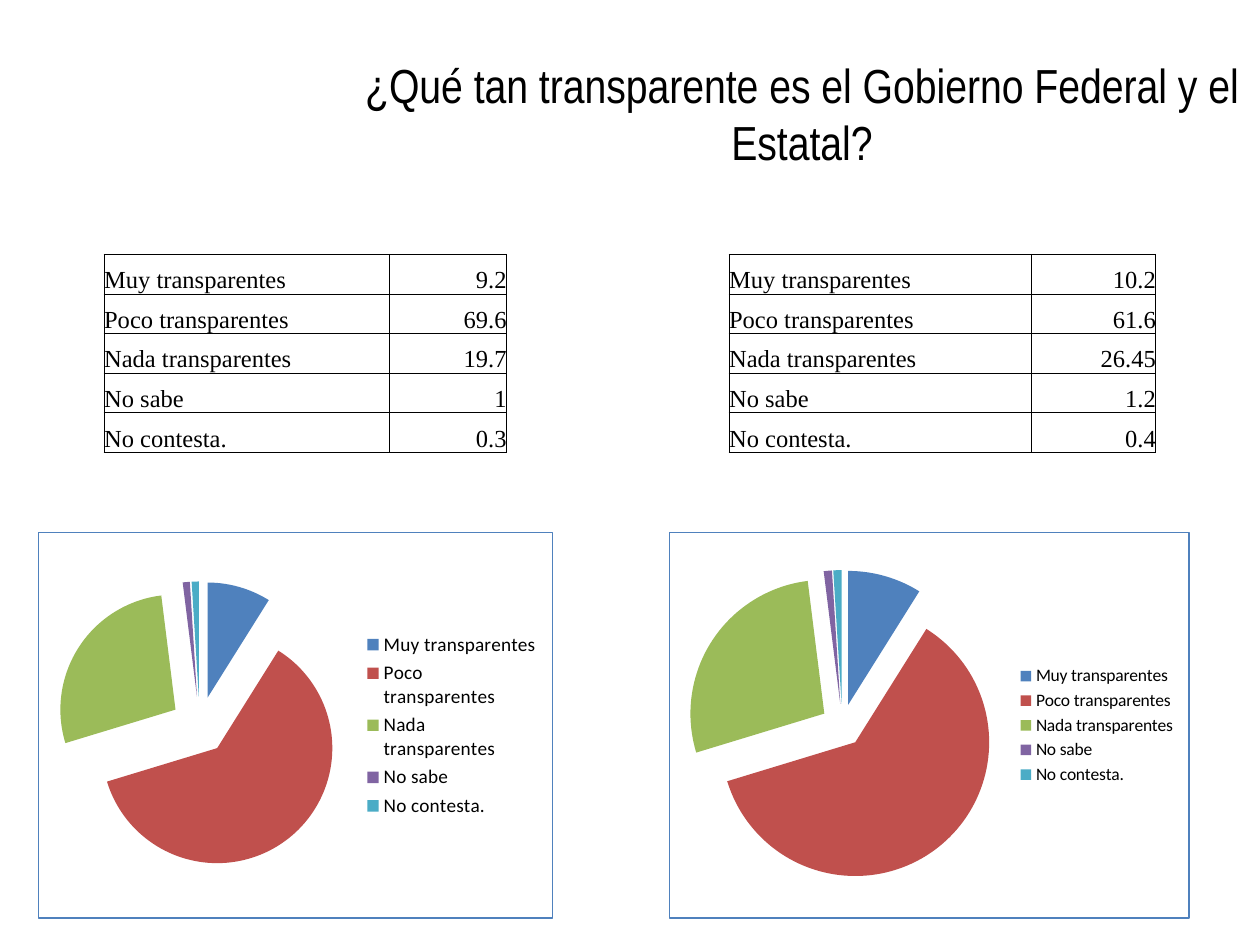
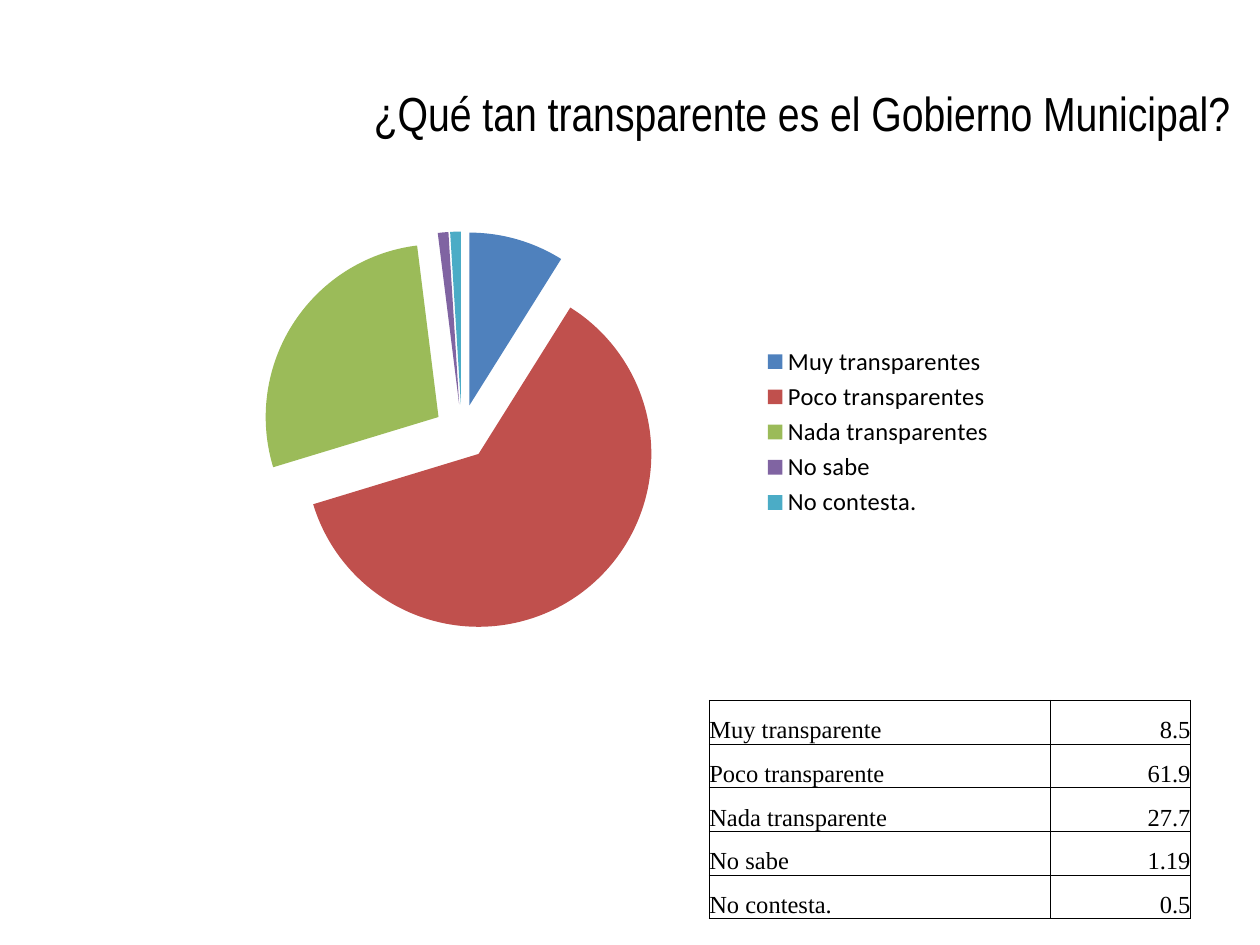
"""Build two slides on perceived government transparency with tables and pie charts."""
from lxml import etree
from pptx import Presentation
from pptx.chart.data import CategoryChartData
from pptx.dml.color import RGBColor
from pptx.enum.chart import XL_CHART_TYPE, XL_LEGEND_POSITION
from pptx.enum.text import MSO_ANCHOR, PP_ALIGN
from pptx.oxml import parse_xml
from pptx.oxml.ns import nsdecls, qn
from pptx.util import Pt

PIE = XL_CHART_TYPE.PIE
RIGHT_LEGEND = XL_LEGEND_POSITION.RIGHT
MIDDLE, BOTTOM = MSO_ANCHOR.MIDDLE, MSO_ANCHOR.BOTTOM
LEFT, CENTER, RIGHT = PP_ALIGN.LEFT, PP_ALIGN.CENTER, PP_ALIGN.RIGHT

BLACK = "000000"
BORDER = "4F81BD"
SLICES = ["4F81BD", "C0504D", "9BBB59", "8064A2", "4BACC6"]
CATEGORIES = ["Muy transparentes", "Poco transparentes", "Nada transparentes",
              "No sabe", "No contesta."]
SINGULAR = ["Muy transparente", "Poco transparente", "Nada transparente",
            "No sabe", "No contesta."]
SHARES = [9, 62, 28, 1, 1]

SLIDES = [
    {
        "title": "¿Qué tan transparente es el Gobierno Federal y el Estatal?",
        "panels": [
            {"labels": CATEGORIES, "values": ["9.2", "69.6", "19.7", "1", "0.3"],
             "table": (59.5, 145.3), "cols": (163, 67), "row": 22.65,
             "chart": (21.6, 304, 294.5, 221), "legend": 11, "explode": 25, "border": True},
            {"labels": CATEGORIES, "values": ["10.2", "61.6", "26.45", "1.2", "0.4"],
             "table": (416.6, 145.3), "cols": (172.7, 71.2), "row": 22.65,
             "chart": (382.3, 304, 297.5, 221), "legend": 10, "explode": 16, "border": True},
        ],
    },
    {
        "title": "¿Qué tan transparente es el Gobierno Municipal?",
        "panels": [
            {"labels": SINGULAR, "values": ["8.5", "61.9", "27.7", "1.19", "0.5"],
             "table": (405.3, 400.2), "cols": (195, 80), "row": 25,
             "chart": (93.6, 122.4, 481.7, 249), "legend": 14, "explode": 16, "border": False},
        ],
    },
]


def rgb(color):
    return RGBColor.from_string(color)


def set_font(font, name, size):
    font.name = name
    font.size = Pt(size)
    font.color.rgb = rgb(BLACK)


prs = Presentation()
prs.slide_width, prs.slide_height = Pt(720), Pt(540)

for content in SLIDES:
    s = prs.slides.add_slide(prs.slide_layouts[6])
    tf = s.shapes.add_textbox(Pt(201.6), Pt(6.5), Pt(513.4), Pt(116)).text_frame
    tf.word_wrap = True
    tf.vertical_anchor = MIDDLE
    p = tf.paragraphs[0]
    p.text = content["title"]
    p.alignment = CENTER
    set_font(p.font, "Arial Narrow", 27.3)

    for panel in content["panels"]:
        left, top = panel["table"]
        cols, row = panel["cols"], panel["row"]
        table = s.shapes.add_table(5, 2, Pt(left), Pt(top), Pt(sum(cols)), Pt(5 * row)).table
        table.first_row = table.horz_banding = False
        for column, width in zip(table.columns, cols):
            column.width = Pt(width)
        for r, texts in enumerate(zip(panel["labels"], panel["values"])):
            table.rows[r].height = Pt(row)
            for c, (text, align) in enumerate(zip(texts, (LEFT, RIGHT))):
                cell = table.cell(r, c)
                cell.margin_left = cell.margin_right = cell.margin_top = cell.margin_bottom = 0
                cell.vertical_anchor = BOTTOM
                for side in ("lnL", "lnR", "lnT", "lnB"):
                    ln = etree.SubElement(cell._tc.get_or_add_tcPr(), qn(f"a:{side}"), w=str(Pt(0.5)))
                    fill = etree.SubElement(ln, qn("a:solidFill"))
                    etree.SubElement(fill, qn("a:srgbClr"), val=BLACK)
                cell.fill.background()
                p = cell.text_frame.paragraphs[0]
                p.text = text
                p.alignment = align
                set_font(p.font, "Times New Roman", 14)

        data = CategoryChartData()
        data.categories = CATEGORIES
        data.add_series("Series 1", SHARES)
        chart = s.shapes.add_chart(PIE, *map(Pt, panel["chart"]), data).chart
        chart.has_title = False
        set_font(chart.font, "Calibri", 10)
        chart.has_legend = True
        chart.legend.position = RIGHT_LEGEND
        chart.legend.include_in_layout = False
        set_font(chart.legend.font, "Calibri", panel["legend"])

        plot = chart.plots[0]
        plot.vary_by_categories = True
        series = plot.series[0]
        explosion = parse_xml(f'<c:explosion {nsdecls("c")} val="{panel["explode"]}"/>')
        series._element.find(qn("c:tx")).addnext(explosion)
        for i, color in enumerate(SLICES):
            fill = series.points[i].format.fill
            fill.solid()
            fill.fore_color.rgb = rgb(color)

        outline = "<a:noFill/>"
        if panel["border"]:
            outline = f'<a:solidFill><a:srgbClr val="{BORDER}"/></a:solidFill>'
        frame = parse_xml(f'<c:spPr {nsdecls("c", "a")}><a:noFill/>'
                          f'<a:ln w="{Pt(0.75)}">{outline}</a:ln></c:spPr>')
        chart._chartSpace.find(qn("c:chart")).addnext(frame)

prs.save("out.pptx")
